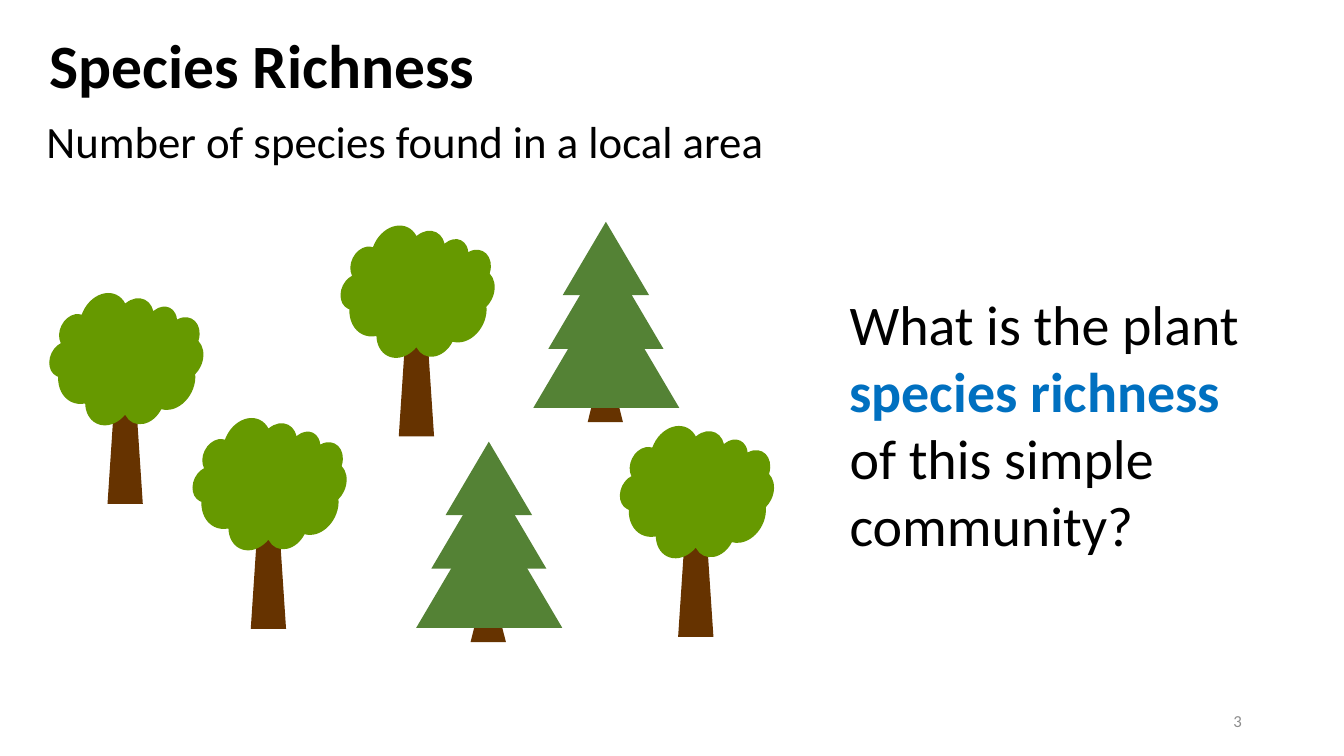
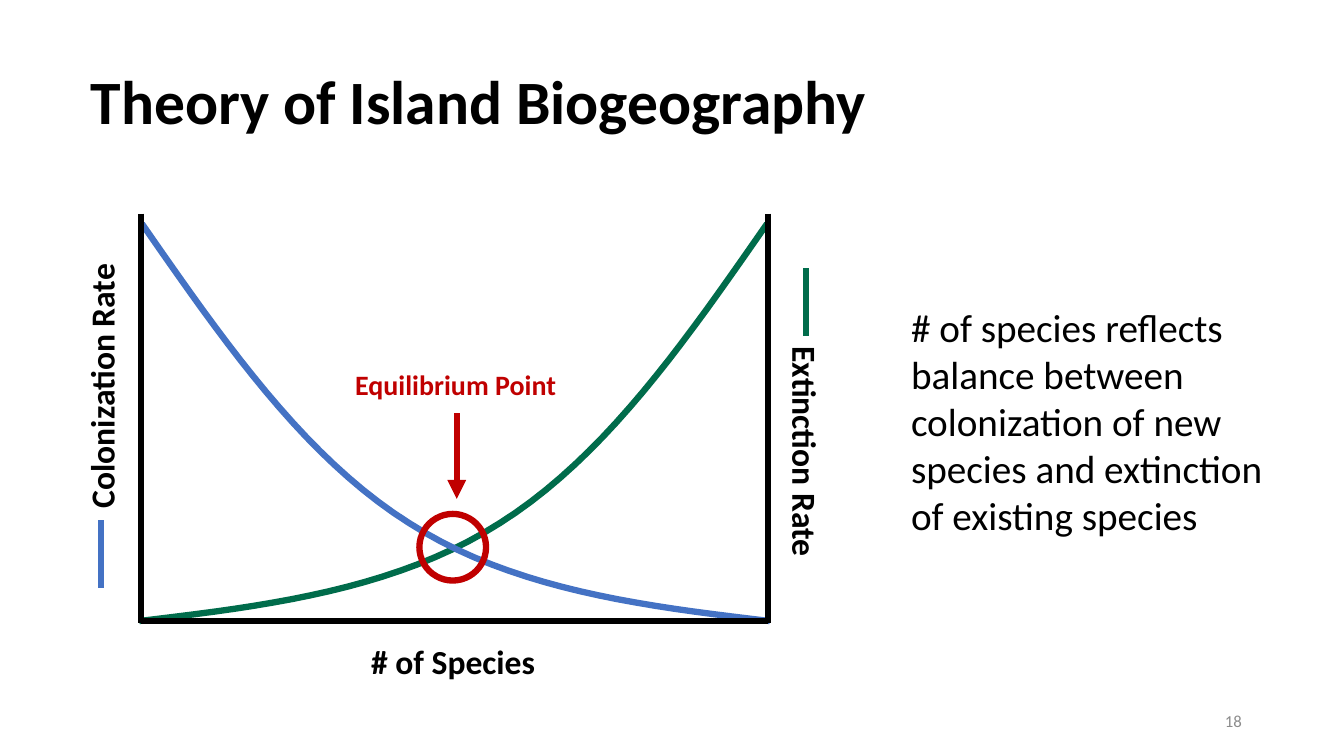
from dataclasses import dataclass

from lxml.etree import SubElement
from pptx import Presentation
from pptx.dml.color import RGBColor
from pptx.enum.shapes import MSO_CONNECTOR, MSO_SHAPE
from pptx.enum.text import MSO_ANCHOR, MSO_AUTO_SIZE, PP_ALIGN
from pptx.oxml.ns import qn
from pptx.util import Cm, Pt


@dataclass(frozen=True)
class Theme:
    font: str = "Calibri"
    ink: str = "000000"
    muted: str = "8C8C8C"
    accent: str = "0070C0"
    alert: str = "C00000"
    colonization: str = "4472C4"
    extinction: str = "006C4B"
    trunk: str = "663300"
    broadleaf: str = "669900"
    conifer: str = "548235"
    title: int = 44
    question: int = 40
    subtitle: int = 32
    body: int = 28
    axis: int = 24
    callout: int = 20
    number: int = 12
    stroke: float = 4.5


THEME = Theme()

# All positions and sizes below are in centimetres.
SLIDE_SIZE = (33.87, 19.05)
TITLE_SIZE = (24.33, 2.51)
NUMBER_BOX = (23.93, 17.65, 7.62, 1.02)
BODY_INSET = 0.53

RICHNESS = {
    "title": "Species Richness",
    "title_at": (0.99, 0.76),
    "number": "3",
    "subtitle": "Number of species found in a local area",
    "question": [
        ("What is the plant ", {}),
        ("species richness ", {"color": THEME.accent, "bold": True}),
        ("of this simple community?", {}),
    ],
}
ISLANDS = {
    "title": "Theory of Island Biogeography",
    "title_at": (2.03, 1.68),
    "number": "18",
    "body": "# of species reflects balance between colonization of new species "
            "and extinction of existing species",
}

# Tree parts: preset, offset and size, colour, rotation.
BROADLEAF = [
    (MSO_SHAPE.TRAPEZOID, (1.39, 1.96, 0.89, 3.35), THEME.trunk, 0),
    (MSO_SHAPE.CLOUD, (0, 0, 3.68, 3.43), THEME.broadleaf, 26.3),
]
CONIFER = [
    (MSO_SHAPE.TRAPEZOID, (1.37, 4.24, 0.89, 0.81), THEME.trunk, 0),
    (MSO_SHAPE.ISOSCELES_TRIANGLE, (0.74, 0, 2.18, 1.85), THEME.conifer, 0),
    (MSO_SHAPE.ISOSCELES_TRIANGLE, (0.38, 0.74, 2.9, 2.46), THEME.conifer, 0),
    (MSO_SHAPE.ISOSCELES_TRIANGLE, (0, 1.57, 3.68, 3.12), THEME.conifer, 0),
]
COMMUNITY = [
    (BROADLEAF, [(1.32, 7.39), (4.93, 10.54), (8.66, 5.69), (15.7, 10.74)]),
    (CONIFER, [(10.49, 11.13), (13.44, 5.59)]),
]

AXIS_LEFT, AXIS_RIGHT = 3.56, 19.35
AXIS_TOP, AXIS_BOTTOM = 5.38, 15.65
EXTINCTION_CURVE = [
    [(19.33, 5.64), (17.3, 8.56), (15.26, 11.51), (12.6, 13.18)],
    [(12.6, 13.18), (9.98, 14.86), (6.73, 15.27), (3.51, 15.65)],
]
CURVE_STEPS = 20
EQUILIBRIUM_RING = (10.57, 12.95, 1.68, 1.68)
AXIS_LABELS = [
    ("# of Species", (9.07, 16.03, 4.7, 1.27), 0),
    ("Colonization Rate", (-0.81, 9.09, 6.73, 1.27), 270),
    ("Extinction Rate", (17.37, 10.74, 5.87, 1.27), 90),
]
LINES = [
    ((AXIS_LEFT, AXIS_TOP), (AXIS_LEFT, AXIS_BOTTOM + 0.05), THEME.ink),
    ((AXIS_RIGHT, AXIS_TOP), (AXIS_RIGHT, AXIS_BOTTOM + 0.05), THEME.ink),
    ((AXIS_LEFT, AXIS_BOTTOM), (AXIS_RIGHT, AXIS_BOTTOM), THEME.ink),
    ((2.54, 13.11), (2.54, 14.81), THEME.colonization),
    ((20.32, 6.76), (20.32, 8.46), THEME.extinction),
]
ARROW = ((11.51, 10.41), (11.51, 12.57))


def to_cm(values):
    return [Cm(value) for value in values]


def set_all(target, values):
    for name, value in values.items():
        setattr(target, name, value)


def write(frame, spans, size, color=THEME.ink, bold=False,
          align=PP_ALIGN.LEFT, **frame_format):
    """Fill a text frame with one paragraph of (text, overrides) spans."""
    set_all(frame, {"word_wrap": True, "auto_size": MSO_AUTO_SIZE.NONE,
                    "vertical_anchor": MSO_ANCHOR.TOP, **frame_format})
    para = frame.paragraphs[0]
    para.alignment = align
    for text, overrides in spans:
        look = {"color": color, "bold": bold, **overrides}
        span = para.add_run()
        span.text = text
        set_all(span.font, {"name": THEME.font, "size": Pt(size), "bold": look["bold"]})
        span.font.color.rgb = RGBColor.from_string(look["color"])
    return para


def add_text(page, text, area, size, rotation=0, **text_format):
    box = page.shapes.add_textbox(*to_cm(area))
    box.rotation = rotation
    spans = [(text, {})] if isinstance(text, str) else text
    write(box.text_frame, spans, size, **text_format)


def add_page(deck, content):
    page = deck.slides.add_slide(deck.slide_layouts[5])
    title = page.shapes.title
    left, top, width, height = to_cm(content["title_at"] + TITLE_SIZE)
    set_all(title, {"left": left, "top": top, "width": width, "height": height})
    para = write(title.text_frame, [(content["title"], {})], THEME.title, bold=True)
    para.line_spacing = 0.9
    add_text(page, content["number"], NUMBER_BOX, THEME.number, color=THEME.muted,
             align=PP_ALIGN.RIGHT, vertical_anchor=MSO_ANCHOR.MIDDLE)
    return page


def add_tree(page, parts, origin):
    tree = page.shapes.add_group_shape()
    for preset, (left, top, width, height), color, rotation in parts:
        area = (origin[0] + left, origin[1] + top, width, height)
        part = tree.shapes.add_shape(preset, *to_cm(area))
        part.rotation = rotation
        part.shadow.inherit = False
        part.fill.solid()
        part.fill.fore_color.rgb = RGBColor.from_string(color)
        part.line.fill.background()


def stroke(shape, color):
    shape.line.color.rgb = RGBColor.from_string(color)
    shape.line.width = Pt(THEME.stroke)


def outline(shape, color):
    shape.shadow.inherit = False
    shape.fill.background()
    stroke(shape, color)


def add_line(page, start, end, color, arrow=False):
    line = page.shapes.add_connector(MSO_CONNECTOR.STRAIGHT, *to_cm(start + end))
    stroke(line, color)
    if arrow:
        SubElement(line.line._get_or_add_ln(), qn("a:tailEnd"), type="triangle")
    SubElement(line._element.spPr, qn("a:effectLst"))


def bezier_point(controls, t):
    weights = ((1 - t) ** 3, 3 * t * (1 - t) ** 2, 3 * t ** 2 * (1 - t), t ** 3)
    return tuple(sum(weight * value for weight, value in zip(weights, axis))
                 for axis in zip(*controls))


def add_curve(page, points, color):
    start, *rest = [tuple(to_cm(point)) for point in points]
    builder = page.shapes.build_freeform(*start)
    builder.add_line_segments(rest, close=False)
    outline(builder.convert_to_shape(), color)


def build_richness(deck):
    page = add_page(deck, RICHNESS)
    add_text(page, RICHNESS["subtitle"], (0.64, 2.74, 29.03, 1.63), THEME.subtitle,
             margin_left=Cm(BODY_INSET))
    for parts, origins in COMMUNITY:
        for origin in origins:
            add_tree(page, parts, origin)
    add_text(page, RICHNESS["question"], (21.16, 7.16, 11.13, 7.09), THEME.question)


def build_islands(deck):
    page = add_page(deck, ISLANDS)
    add_text(page, ISLANDS["body"], (22.43, 7.52, 10.67, 6.25), THEME.body,
             margin_left=Cm(BODY_INSET))

    extinction = [bezier_point(controls, step / CURVE_STEPS)
                  for controls in EXTINCTION_CURVE for step in range(CURVE_STEPS + 1)]
    colonization = [(AXIS_LEFT + AXIS_RIGHT - x, y) for x, y in extinction]
    add_curve(page, extinction, THEME.extinction)
    add_curve(page, colonization, THEME.colonization)
    ring = page.shapes.add_shape(MSO_SHAPE.OVAL, *to_cm(EQUILIBRIUM_RING))
    outline(ring, THEME.alert)

    for label, area, rotation in AXIS_LABELS:
        add_text(page, label, area, THEME.axis, rotation, bold=True,
                 align=PP_ALIGN.CENTER, word_wrap=False)
    for start, end, color in LINES:
        add_line(page, start, end, color)
    add_text(page, "Equilibrium Point", (8.26, 9.14, 6.45, 1.12), THEME.callout,
             color=THEME.alert, bold=True, align=PP_ALIGN.CENTER)
    add_line(page, *ARROW, THEME.alert, arrow=True)


def main():
    deck = Presentation()
    deck.slide_width, deck.slide_height = to_cm(SLIDE_SIZE)
    build_richness(deck)
    build_islands(deck)
    deck.save("out.pptx")


if __name__ == "__main__":
    main()
